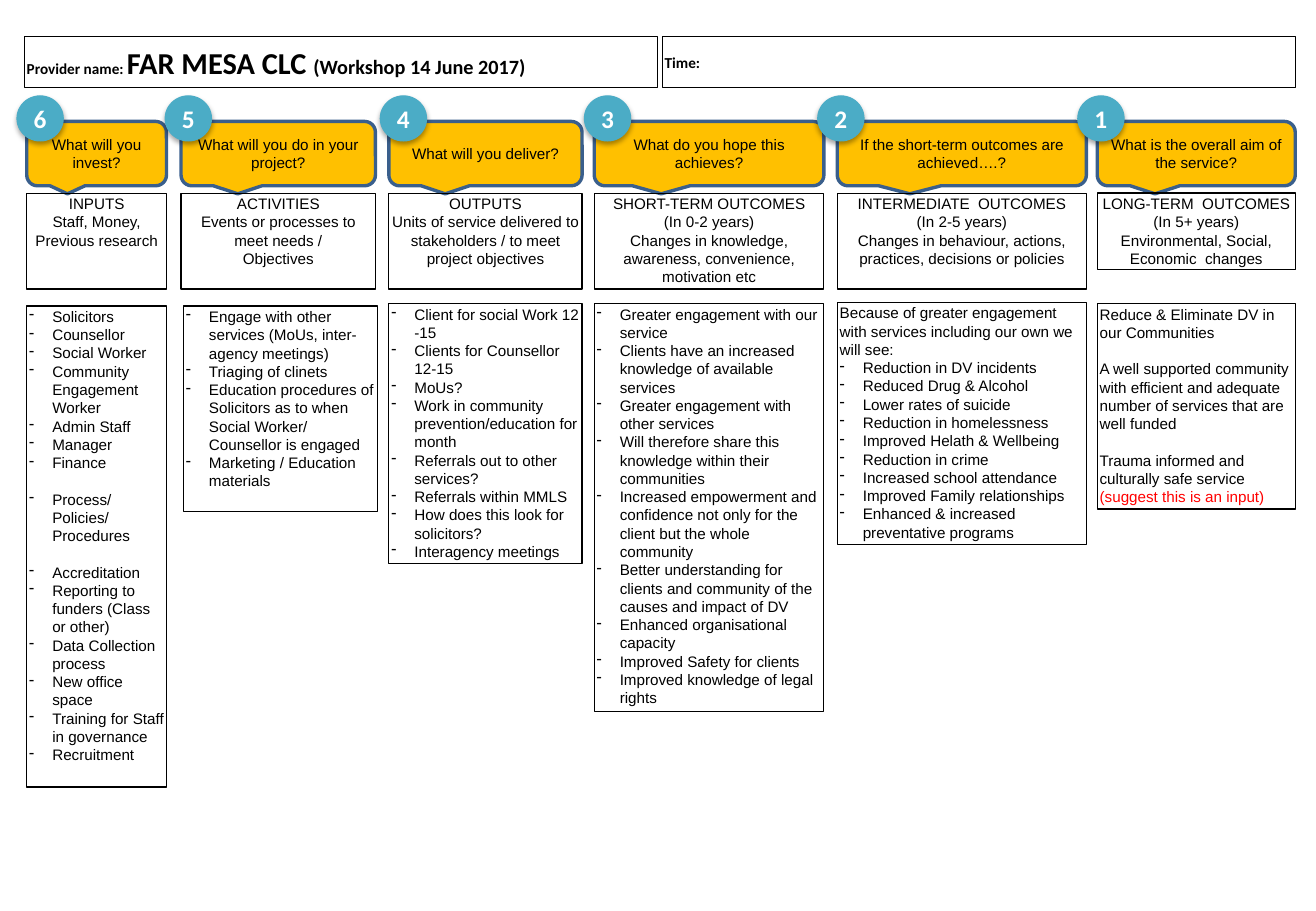
import dataclasses

import pptx
import pptx.dml.color
import pptx.enum.shapes
import pptx.enum.text
import pptx.oxml
import pptx.oxml.ns
import pptx.util

Inches, Pt = pptx.util.Inches, pptx.util.Pt
RGBColor = pptx.dml.color.RGBColor
SHAPE = pptx.enum.shapes.MSO_SHAPE
ALIGN = pptx.enum.text.PP_ALIGN
ANCHOR = pptx.enum.text.MSO_ANCHOR

BLACK = RGBColor(0x00, 0x00, 0x00)
WHITE = RGBColor(0xFF, 0xFF, 0xFF)
RED = RGBColor(0xFF, 0x00, 0x00)
AMBER = RGBColor(0xFF, 0xC0, 0x00)
NAVY = RGBColor(0x3A, 0x5F, 0x8C)
TEAL = RGBColor(0x4B, 0xAC, 0xC6)

TEXT_SIZE = 9
LINE_GAP = Pt(10.8)
INDENT = Inches(0.19)
BADGE_SHADOW = (
    f'<a:effectLst {pptx.oxml.ns.nsdecls("a")}>'
    '<a:outerShdw blurRad="39370" dist="22860" dir="5400000" rotWithShape="0">'
    '<a:srgbClr val="000000"><a:alpha val="35000"/></a:srgbClr>'
    '</a:outerShdw></a:effectLst>')


@dataclasses.dataclass
class Item:
    text: str
    bullet: bool = True
    gap: bool = False
    note: str = ""


@dataclasses.dataclass
class Column:
    left: float
    width: float
    badge_left: float
    question: str
    heading: list
    list_top: float
    list_height: float
    items: list
    list_shift: float = 0
    heading_height: float = 0.79


def items(*texts):
    return [Item(text) for text in texts]


COLUMNS = [
    Column(0.22, 1.15, 0.14, "What will you invest?",
           ["INPUTS", "Staff, Money, Previous research"], 2.52, 3.96,
           items("Solicitors", "Counsellor", "Social Worker",
                 "Community Engagement Worker", "Admin Staff", "Manager", "Finance")
           + [Item("Process/ Policies/ Procedures", gap=True),
              Item("Accreditation", gap=True)]
           + items("Reporting to funders (Class or other)", "Data Collection process",
                   "New office space", "Training for Staff in governance",
                   "Recruitment")),
    Column(1.49, 1.6, 1.36, "What will you do in your project?",
           ["ACTIVITIES", "Events or processes to meet needs /", "Objectives"],
           2.52, 1.69,
           items("Engage with other services (MoUs, inter-agency meetings)",
                 "Triaging of clinets",
                 "Education procedures of Solicitors as to when Social Worker/ "
                 "Counsellor is engaged",
                 "Marketing / Education materials"), list_shift=0.02),
    Column(3.2, 1.59, 3.13, "What will you deliver?",
           ["OUTPUTS", "Units of service delivered to stakeholders / to meet "
            "project objectives"], 2.5, 2.14,
           items("Client for social Work 12 -15", "Clients for Counsellor 12-15",
                 "MoUs?", "Work in community prevention/education for month",
                 "Referrals out to other services?", "Referrals within MMLS",
                 "How does this look for solicitors?", "Interagency meetings")),
    Column(4.89, 1.89, 4.81, "What do you hope this achieves?",
           ["SHORT-TERM OUTCOMES", "(In 0-2 years)",
            "Changes in knowledge, awareness, convenience, motivation etc"],
           2.5, 3.36,
           items("Greater engagement with our service",
                 "Clients have an increased knowledge of available services",
                 "Greater engagement with other services",
                 "Will therefore share this knowledge within their communities",
                 "Increased empowerment and confidence not only for the client "
                 "but the whole community",
                 "Better understanding for clients and community of the causes "
                 "and impact of DV",
                 "Enhanced organisational capacity", "Improved Safety for clients",
                 "Improved knowledge of legal rights")),
    Column(6.89, 2.05, 6.73, "If the short-term outcomes are achieved….?",
           ["INTERMEDIATE  OUTCOMES", "(In 2-5 years)",
            "Changes in behaviour, actions, practices, decisions or policies"],
           2.49, 1.99,
           [Item("Because of greater engagement with services including our own "
                 "we will see:", bullet=False)]
           + items("Reduction in DV incidents", "Reduced Drug & Alcohol",
                   "Lower rates of suicide", "Reduction in homelessness",
                   "Improved Helath & Wellbeing", "Reduction in crime",
                   "Increased school attendance", "Improved Family relationships",
                   "Enhanced & increased preventative programs")),
    Column(9.03, 1.63, 8.87, "What is the overall aim of the service?",
           ["LONG-TERM  OUTCOMES", "(In 5+ years)",
            "Environmental, Social, Economic  changes"], 2.5, 1.69,
           [Item("Reduce & Eliminate DV in our Communities", bullet=False),
            Item("A well supported community with efficient and adequate number "
                 "of services that are well funded", bullet=False, gap=True),
            Item("Trauma informed and culturally safe service ", bullet=False,
                 gap=True, note="(suggest this is an input)")],
           heading_height=0.63),
]


def add_run(p, text, size=TEXT_SIZE, font="Arial", color=BLACK, bold=False):
    r = p.add_run()
    r.text = text
    r.font.size = Pt(size)
    r.font.name = font
    r.font.bold = bold
    r.font.color.rgb = color


def add_dash(p):
    pPr = p._p.get_or_add_pPr()
    pPr.set("marL", str(INDENT))
    pPr.set("indent", str(-INDENT))
    pPr.append(pptx.oxml.parse_xml(
        f'<a:buChar {pptx.oxml.ns.nsdecls("a")} char="-"/>'))


def set_frame(s, anchor):
    tf = s.text_frame
    tf.word_wrap = True
    tf.auto_size = pptx.enum.text.MSO_AUTO_SIZE.NONE
    tf.vertical_anchor = anchor
    tf.margin_left = tf.margin_right = Inches(0.02)
    tf.margin_top = tf.margin_bottom = Inches(0.01)
    return tf


def set_line(s, color=BLACK, width=0.75):
    s.line.color.rgb = color
    s.line.width = Pt(width)


def add_paragraphs(tf, count, align):
    """Return the frame's first paragraph and count - 1 new ones, aligned."""
    paragraphs = [tf.paragraphs[0]] + [tf.add_paragraph() for _ in range(count - 1)]
    for p in paragraphs:
        p.alignment = align
    return paragraphs


def add_box(slide, left, top, width, height, anchor=ANCHOR.TOP):
    s = slide.shapes.add_textbox(
        Inches(left), Inches(top), Inches(width), Inches(height))
    set_line(s)
    return set_frame(s, anchor)


def add_filled(slide, kind, left, top, width, height, fill, line, line_width):
    s = slide.shapes.add_shape(
        kind, Inches(left), Inches(top), Inches(width), Inches(height))
    s.shadow.inherit = False
    s.fill.solid()
    s.fill.fore_color.rgb = fill
    set_line(s, line, line_width)
    p, = add_paragraphs(set_frame(s, ANCHOR.MIDDLE), 1, ALIGN.CENTER)
    return s, p


def add_callout(slide, col):
    _, p = add_filled(slide, SHAPE.ROUNDED_RECTANGULAR_CALLOUT,
                      col.left, 1, col.width, 0.53, AMBER, NAVY, 2)
    add_run(p, col.question)


def add_heading(slide, col):
    tf = add_box(slide, col.left, 1.59, col.width, col.heading_height)
    for p, text in zip(add_paragraphs(tf, len(col.heading), ALIGN.CENTER), col.heading):
        add_run(p, text)


def add_list(slide, col):
    tf = add_box(slide, col.left + col.list_shift, col.list_top,
                 col.width, col.list_height)
    for p, item in zip(add_paragraphs(tf, len(col.items), ALIGN.LEFT), col.items):
        if item.gap:
            p.space_before = LINE_GAP
        if item.bullet:
            add_dash(p)
        add_run(p, item.text)
        if item.note:
            add_run(p, item.note, color=RED)


def add_badge(slide, left, number):
    s, p = add_filled(slide, SHAPE.OVAL, left, 0.79, 0.38, 0.37, TEAL, TEAL, 0.75)
    spPr = s._element.spPr
    spPr.remove(spPr.find(pptx.oxml.ns.qn("a:effectLst")))
    spPr.append(pptx.oxml.parse_xml(BADGE_SHADOW))
    add_run(p, str(number), 15, "Calibri", WHITE, True)


def add_header(slide):
    title = slide.shapes.title
    title.left, title.top = Inches(0.2), Inches(0.3)
    title.width, title.height = Inches(5.21), Inches(0.42)
    set_line(title)
    p, = add_paragraphs(set_frame(title, ANCHOR.MIDDLE), 1, ALIGN.LEFT)
    for text, size in (("Provider name: ", 9), ("FAR MESA CLC ", 18),
                       ("(Workshop 14 June 2017)", 12)):
        add_run(p, text, size, "Calibri", bold=True)
    tf = add_box(slide, 5.45, 0.3, 5.21, 0.42, ANCHOR.MIDDLE)
    add_run(tf.paragraphs[0], "Time:", font="Calibri", bold=True)


def main():
    prs = pptx.Presentation()
    prs.slide_width, prs.slide_height = Inches(10.83), Inches(7.5)
    slide = prs.slides.add_slide(prs.slide_layouts.get_by_name("Title Only"))
    add_header(slide)
    for i, col in enumerate(COLUMNS):
        add_callout(slide, col)
        add_heading(slide, col)
        add_list(slide, col)
        add_badge(slide, col.badge_left, len(COLUMNS) - i)
    prs.save("out.pptx")


if __name__ == "__main__":
    main()
